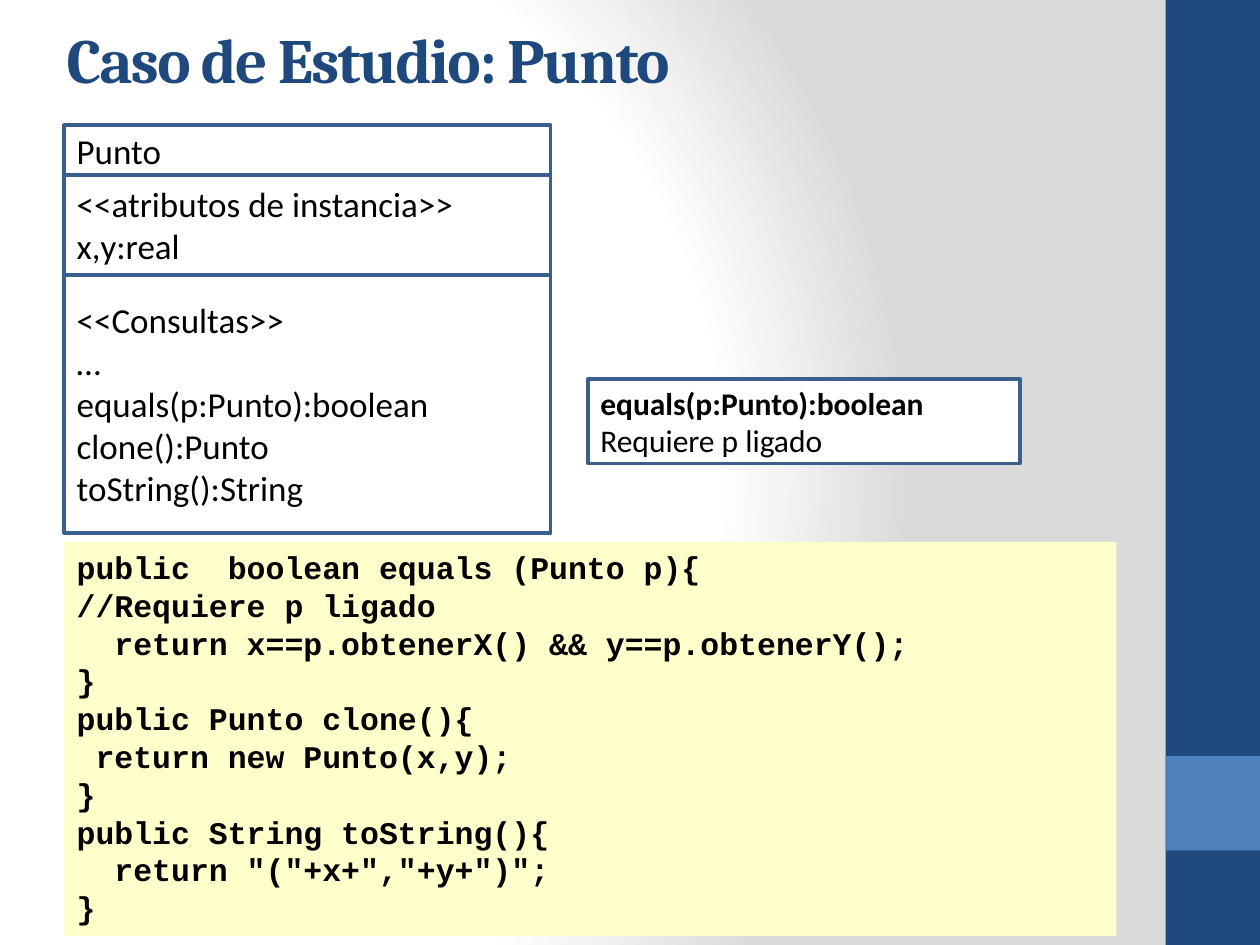
import dataclasses

import lxml.etree
import pptx
import pptx.dml.color
import pptx.enum.shapes
import pptx.enum.text
import pptx.oxml.ns
import pptx.util

Pt = pptx.util.Pt
Anchor = pptx.enum.text.MSO_ANCHOR


@dataclasses.dataclass(frozen=True)
class Theme:
    navy: str = "1F497D"
    blue: str = "4F81BD"
    outline: str = "3A5F8C"
    code_fill: str = "FFFFCC"
    white: str = "FFFFFF"
    gray: str = "DADADA"
    black: str = "000000"
    title_font: str = "Cambria"
    body_font: str = "Calibri"
    code_font: str = "Courier New"
    title_size: int = 36
    class_size: int = 20
    detail_size: int = 18


THEME = Theme()
LEFT = 36.7

CLASS_WIDTH = 278
CLASS_TOP = 71.5
CLASS_SECTIONS = [
    (28.5, ["Punto"]),
    (57, ["<<atributos de instancia>>", "x,y:real"]),
    (147.5, ["<<Consultas>>", "…", "equals(p:Punto):boolean",
             "clone():Punto", "toString():String"]),
]

CODE_LINES = [
    "public  boolean equals (Punto p){",
    "//Requiere p ligado",
    "  return x==p.obtenerX() && y==p.obtenerY();",
    "}",
    "public Punto clone(){",
    " return new Punto(x,y);",
    "}",
    "public String toString(){",
    '  return "("+x+","+y+")";',
    "}",
]


def rgb(color):
    return pptx.dml.color.RGBColor.from_string(color)


def set_background(slide):
    """Circular gradient, white in the middle and gray at the rim."""
    slide.background.fill.gradient()
    qn = pptx.oxml.ns.qn
    gradient = slide.element.find(".//" + qn("a:gradFill"))
    for child in list(gradient):
        gradient.remove(child)
    stops = lxml.etree.SubElement(gradient, qn("a:gsLst"))
    for percent, color in [(0, THEME.white), (75, THEME.white), (100, THEME.gray)]:
        stop = lxml.etree.SubElement(stops, qn("a:gs"), pos=str(percent * 1000))
        lxml.etree.SubElement(stop, qn("a:srgbClr"), val=color)
    circle = lxml.etree.SubElement(gradient, qn("a:path"))
    circle.set("path", "circle")
    lxml.etree.SubElement(circle, qn("a:fillToRect"),
                          l="20000", t="50000", r="100000", b="50000")


def add_box(slide, left, top, width, height, fill, line=None):
    shape = slide.shapes.add_shape(
        pptx.enum.shapes.MSO_SHAPE.RECTANGLE,
        Pt(left), Pt(top), Pt(width), Pt(height))
    shape.shadow.inherit = False
    shape.fill.solid()
    shape.fill.fore_color.rgb = rgb(fill)
    if line:
        shape.line.color.rgb = rgb(line)
        shape.line.width = Pt(2)
    else:
        shape.line.fill.background()
    return shape


def write_lines(shape, lines, font, size, color=THEME.black,
                bold_lines=(), anchor=Anchor.MIDDLE, spacing=None):
    """Write one paragraph per line; return the runs."""
    frame = shape.text_frame
    frame.word_wrap = True
    frame.vertical_anchor = anchor
    runs = []
    for index, line in enumerate(lines):
        paragraph = frame.add_paragraph() if index else frame.paragraphs[0]
        paragraph.alignment = pptx.enum.text.PP_ALIGN.LEFT
        if spacing:
            paragraph.line_spacing = Pt(spacing)
        run = paragraph.add_run()
        run.text = line
        run.font.name = font
        run.font.size = Pt(size)
        run.font.bold = index in bold_lines
        run.font.color.rgb = rgb(color)
        runs.append(run)
    return runs


def add_title(slide, text):
    box = slide.shapes.add_textbox(Pt(31), Pt(3.6), Pt(594), Pt(54.7))
    run, = write_lines(box, [text], THEME.title_font, THEME.title_size,
                       THEME.navy, bold_lines=[0], anchor=Anchor.BOTTOM)
    run.font._element.set("spc", "-100")


def add_class_diagram(slide):
    top = CLASS_TOP
    for height, lines in CLASS_SECTIONS:
        section = add_box(slide, LEFT, top, CLASS_WIDTH, height,
                          THEME.white, THEME.outline)
        write_lines(section, lines, THEME.body_font, THEME.class_size)
        top += height


def add_code(slide):
    panel = add_box(slide, LEFT, 309.6, 601.2, 225.4, THEME.code_fill)
    write_lines(panel, CODE_LINES, THEME.code_font, THEME.detail_size,
                bold_lines=range(len(CODE_LINES)), anchor=Anchor.TOP,
                spacing=21.6)


def add_contract(slide):
    box = add_box(slide, 336, 216.7, 247, 48.2, THEME.white, THEME.outline)
    write_lines(box, ["equals(p:Punto):boolean", "Requiere p ligado"],
                THEME.body_font, THEME.detail_size, bold_lines=[0])


def main():
    presentation = pptx.Presentation()
    presentation.slide_width = Pt(720)
    presentation.slide_height = Pt(540)
    slide = presentation.slides.add_slide(presentation.slide_layouts[6])

    # Background and side band
    set_background(slide)
    add_box(slide, 666, 0, 54, 540, THEME.navy)
    add_box(slide, 666, 432, 54, 54, THEME.blue)

    # Content
    add_title(slide, "Caso de Estudio: Punto")
    add_class_diagram(slide)
    add_code(slide)
    add_contract(slide)

    presentation.save("out.pptx")


if __name__ == "__main__":
    main()
